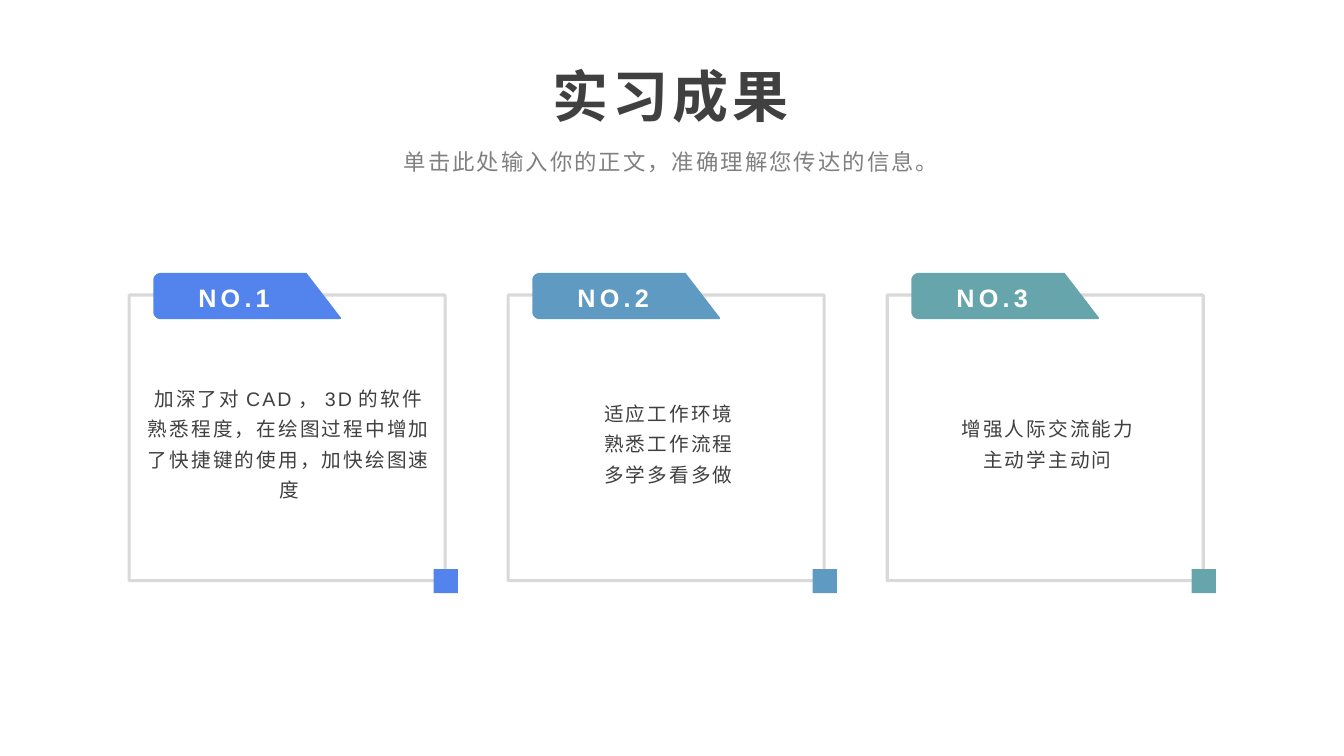
from dataclasses import dataclass
from math import cos, pi, sin

from lxml.etree import SubElement
from pptx import Presentation
from pptx.dml.color import RGBColor
from pptx.enum.lang import MSO_LANGUAGE_ID
from pptx.enum.shapes import MSO_SHAPE
from pptx.enum.text import MSO_ANCHOR, PP_ALIGN
from pptx.oxml.ns import qn
from pptx.shapes.autoshape import Shape
from pptx.slide import Slide
from pptx.util import Emu, Pt

PX = 9525


@dataclass(frozen=True)
class TextStyle:
    size: int
    color: str
    tracking: float
    line_spacing: float = 1.3
    bold: bool = False
    anchor: MSO_ANCHOR = MSO_ANCHOR.MIDDLE


@dataclass(frozen=True)
class Theme:
    font: str = "Arial"
    frame: str = "000000"
    frame_opacity: int = 15
    frame_width: float = 2.25
    title: TextStyle = TextStyle(40, "404040", 3, 1.2, bold=True)
    subtitle: TextStyle = TextStyle(16, "808080", 1.5, anchor=MSO_ANCHOR.TOP)
    number: TextStyle = TextStyle(18, "FFFFFF", 3, bold=True)
    body: TextStyle = TextStyle(14, "404040", 1.5)


@dataclass(frozen=True)
class Box:
    left: int
    top: int
    width: int
    height: int

    def emu(self) -> tuple[Emu, ...]:
        return tuple(Emu(v * PX) for v in (self.left, self.top, self.width, self.height))


@dataclass(frozen=True)
class Card:
    color: str
    lines: tuple[str, ...]


THEME = Theme()
FIRST_CARD = Box(123, 281, 301, 272)
CARD_PITCH = 361
CORNER_SIZE = 23
TAB_RADIUS = 7
CARDS = (
    Card("5384EE", ("加深了对CAD，3D的软件熟悉程度，在绘图过程中增加了快捷键的使用，加快绘图速度",)),
    Card("5F9AC2", ("适应工作环境", "熟悉工作流程", "多学多看多做")),
    Card("66A5AB", ("增强人际交流能力", "主动学主动问")),
)


def add_text(page: Slide, box: Box, lines: tuple[str, ...], style: TextStyle) -> None:
    frame = page.shapes.add_textbox(*box.emu()).text_frame
    frame.word_wrap = True
    frame.vertical_anchor = style.anchor
    for index, line in enumerate(lines):
        para = frame.add_paragraph() if index else frame.paragraphs[0]
        para.alignment = PP_ALIGN.CENTER
        para.line_spacing = style.line_spacing
        para.font.name = THEME.font
        para.font.size = Pt(style.size)
        para.font.bold = style.bold
        para.font.color.rgb = RGBColor.from_string(style.color)
        para.font.language_id = MSO_LANGUAGE_ID.SIMPLIFIED_CHINESE
        span = para.add_run()
        span.text = line
        span._r.get_or_add_rPr().set("spc", str(round(style.tracking * 100)))


def paint(shape: Shape, color: str) -> None:
    shape.shadow.inherit = False
    shape.fill.solid()
    shape.fill.fore_color.rgb = RGBColor.from_string(color)
    shape.line.fill.background()


def add_frame(page: Slide, box: Box) -> None:
    frame = page.shapes.add_shape(MSO_SHAPE.RECTANGLE, *box.emu())
    frame.shadow.inherit = False
    frame.fill.background()
    frame.line.width = Pt(THEME.frame_width)
    frame.line.color.rgb = RGBColor.from_string(THEME.frame)
    color = frame.line._ln.find(".//" + qn("a:srgbClr"))
    SubElement(color, qn("a:alpha")).set("val", str(THEME.frame_opacity * 1000))


def arc(center_x: int, center_y: int, start: float) -> list[tuple[float, float]]:
    angles = [start + pi / 2 * step / 8 for step in range(9)]
    return [(center_x + TAB_RADIUS * cos(a), center_y + TAB_RADIUS * sin(a)) for a in angles]


def add_tab(page: Slide, box: Box, color: str) -> None:
    width, height, slant = box.width, box.height, 33
    outline = [
        (TAB_RADIUS, 0),
        (width - slant, 0),
        (width, height - 1),
        (width - 1, height),
        *arc(TAB_RADIUS, height - TAB_RADIUS, pi / 2),
        *arc(TAB_RADIUS, TAB_RADIUS, pi),
    ]
    points = [(round((box.left + x) * PX), round((box.top + y) * PX)) for x, y in outline]
    builder = page.shapes.build_freeform(*points[0])
    builder.add_line_segments(points[1:], close=True)
    paint(builder.convert_to_shape(), color)


def add_card(page: Slide, index: int, card: Card) -> None:
    left, top = FIRST_CARD.left + index * CARD_PITCH, FIRST_CARD.top
    width, height = FIRST_CARD.width, FIRST_CARD.height
    add_frame(page, Box(left, top, width, height))
    offset = CORNER_SIZE // 2
    corner = Box(left + width - offset, top + height - offset, CORNER_SIZE, CORNER_SIZE)
    paint(page.shapes.add_shape(MSO_SHAPE.RECTANGLE, *corner.emu()), card.color)
    add_text(page, Box(left + 6, top + 28, 293, 221), card.lines, THEME.body)
    add_tab(page, Box(left + 23, top - 21, 179, 44), card.color)
    add_text(page, Box(left + 8, top - 26, 184, 48), (f"NO.{index + 1}",), THEME.number)


def main() -> None:
    deck = Presentation()
    deck.slide_width, deck.slide_height = Emu(1280 * PX), Emu(720 * PX)
    page = deck.slides.add_slide(deck.slide_layouts[6])
    add_text(page, Box(230, 41, 818, 86), ("实习成果",), THEME.title)
    subtitle = "单击此处输入你的正文，准确理解您传达的信息。"
    add_text(page, Box(233, 129, 813, 43), (subtitle,), THEME.subtitle)
    for index, card in enumerate(CARDS):
        add_card(page, index, card)
    deck.save("out.pptx")


if __name__ == "__main__":
    main()
